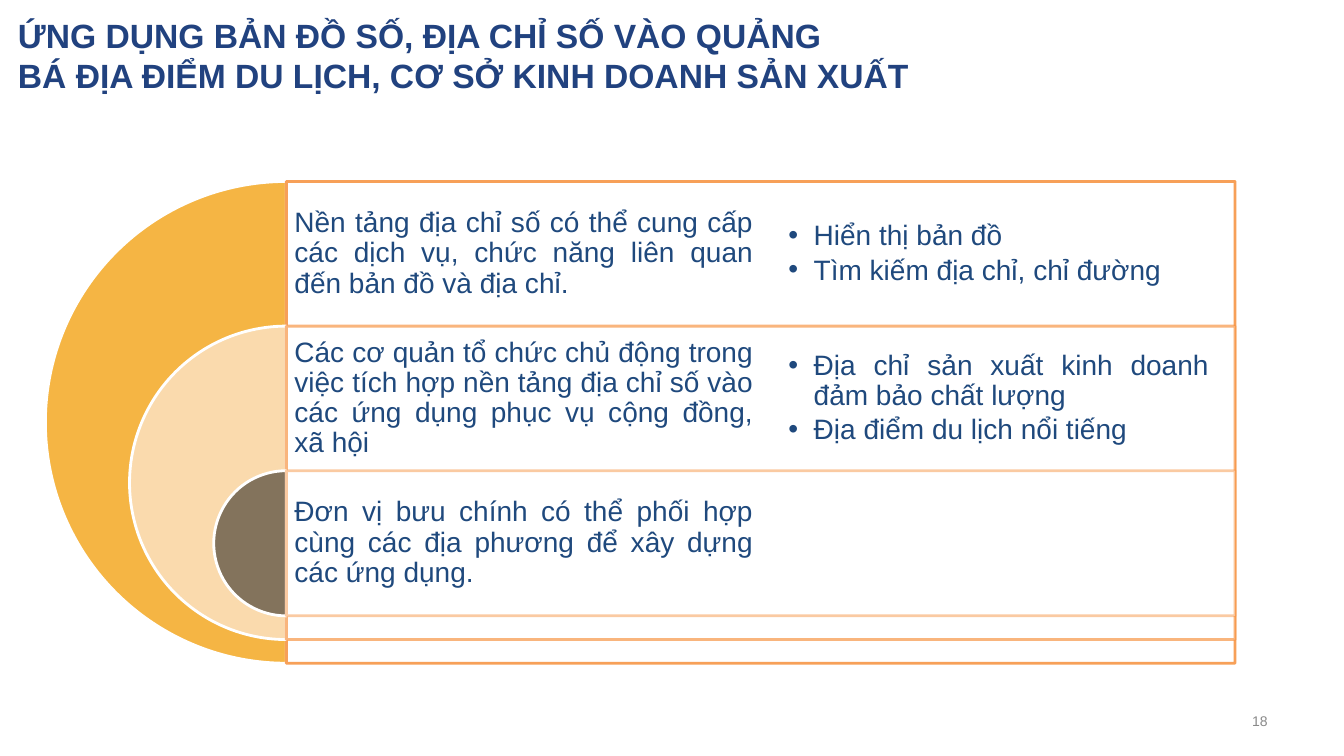
from dataclasses import dataclass

from lxml.etree import SubElement
from pptx import Presentation
from pptx.dml.color import RGBColor
from pptx.enum.shapes import MSO_SHAPE
from pptx.enum.text import MSO_ANCHOR, PP_ALIGN
from pptx.oxml.ns import qn
from pptx.shapes.autoshape import Shape
from pptx.slide import Slide
from pptx.text.text import _Paragraph as Para
from pptx.util import Inches, Pt

WHITE, ORANGE, NAVY = "FFFFFF", "F79646", "1F497D"
AXIS, TOP, STEP = 2.84, 1.8, 1.435
WIDE, HALF = 9.41, 4.71


@dataclass
class Layer:
    size: float
    fill: str
    alpha: int
    text: str
    points: tuple[str, ...] = ()


LAYERS = [
    Layer(4.78, "F4AE30", 90,
          "Nền tảng địa chỉ số có thể cung cấp các dịch vụ, chức năng liên quan đến bản đồ và địa chỉ.",
          ("Hiển thị bản đồ", "Tìm kiếm địa chỉ, chỉ đường")),
    Layer(3.11, "FDEADA", 70,
          "Các cơ quản tổ chức chủ động trong việc tích hợp nền tảng địa chỉ số vào các ứng dụng "
          "phục vụ cộng đồng, xã hội",
          ("Địa chỉ sản xuất kinh doanh đảm bảo chất lượng", "Địa điểm du lịch nổi tiếng")),
    Layer(1.44, "0D0D0D", 50,
          "Đơn vị bưu chính có thể phối hợp cùng các địa phương để xây dựng các ứng dụng."),
]


def color(code: str) -> RGBColor:
    return RGBColor.from_string(code)


def fade(shape: Shape, tag: str, alpha: int) -> None:
    """Set the opacity of the fill (a:solidFill) or the line (a:ln/a:solidFill)."""
    tint = shape._element.spPr.find(f"{tag}/{qn('a:srgbClr')}")
    SubElement(tint, qn("a:alpha"), val=str(alpha * 1000))


def draw(slide: Slide, kind: MSO_SHAPE, box: tuple[float, ...],
         fill: str, alpha: int, line: str, clear: int = 100) -> Shape:
    shape = slide.shapes.add_shape(kind, *map(Inches, box))
    shape.shadow.inherit = False
    shape.fill.solid()
    shape.fill.fore_color.rgb = color(fill)
    shape.line.color.rgb = color(line)
    shape.line.width = Pt(2)
    fade(shape, qn("a:solidFill"), alpha)
    if clear < 100:
        fade(shape, f"{qn('a:ln')}/{qn('a:solidFill')}", clear)
    return shape


def bullet(para: Para) -> None:
    props = para._p.get_or_add_pPr()
    props.set("marL", str(Inches(0.25)))
    props.set("indent", str(-Inches(0.25)))
    SubElement(props, qn("a:buFont"), typeface="Arial")
    SubElement(props, qn("a:buChar"), char="•")


def write(slide: Slide, box: tuple[float, ...], lines: tuple[str, ...], size: int,
          tint: str, align: PP_ALIGN, pad: tuple[float, float] = (0.1, 0.05),
          bold: bool = False, dots: bool = False, lead: float = 1.0) -> None:
    frame = slide.shapes.add_textbox(*map(Inches, box)).text_frame
    frame.word_wrap = True
    frame.vertical_anchor = MSO_ANCHOR.MIDDLE
    frame.margin_left = frame.margin_right = Inches(pad[0])
    frame.margin_top = frame.margin_bottom = Inches(pad[1])
    for i, line in enumerate(lines):
        para = frame.add_paragraph() if i else frame.paragraphs[0]
        para.text = line
        if dots:
            bullet(para)
            para.space_after = Pt(3)
        para.alignment = align
        para.line_spacing = lead
        para.font.name = "Arial"
        para.font.size = Pt(size)
        para.font.bold = bold
        para.font.color.rgb = color(tint)


def stack(slide: Slide) -> None:
    for i, layer in enumerate(LAYERS):
        top, size = TOP + i * STEP, layer.size
        pie = draw(slide, MSO_SHAPE.PIE, (AXIS - size / 2, top, size, size),
                   layer.fill, layer.alpha, WHITE)
        pie.adjustments[0], pie.adjustments[1] = 54, 162
        draw(slide, MSO_SHAPE.RECTANGLE, (AXIS, top, WIDE, size),
             WHITE, 90, ORANGE, layer.alpha)
        write(slide, (AXIS, top, HALF, STEP), (layer.text,), 20, NAVY,
              PP_ALIGN.JUSTIFY, pad=(0.08, 0.08), lead=0.9)
        if layer.points:
            write(slide, (AXIS + HALF, top, HALF, STEP), layer.points, 20, NAVY,
                  PP_ALIGN.JUSTIFY, pad=(0.27, 0.27), dots=True, lead=0.9)


def main() -> None:
    deck = Presentation()
    deck.slide_width, deck.slide_height = Inches(13.33), Inches(7.5)
    slide = deck.slides.add_slide(deck.slide_layouts[6])
    title = ("ỨNG DỤNG BẢN ĐỒ SỐ, ĐỊA CHỈ SỐ VÀO QUẢNG\v"
             "BÁ ĐỊA ĐIỂM DU LỊCH, CƠ SỞ KINH DOANH SẢN XUẤT")
    write(slide, (0.08, 0.07, 12.67, 0.95), (title,), 24, "21427F", PP_ALIGN.LEFT, bold=True)
    stack(slide)
    write(slide, (9.56, 6.95, 3.11, 0.4), ("18",), 10, "898989", PP_ALIGN.RIGHT)
    deck.save("out.pptx")


if __name__ == "__main__":
    main()
